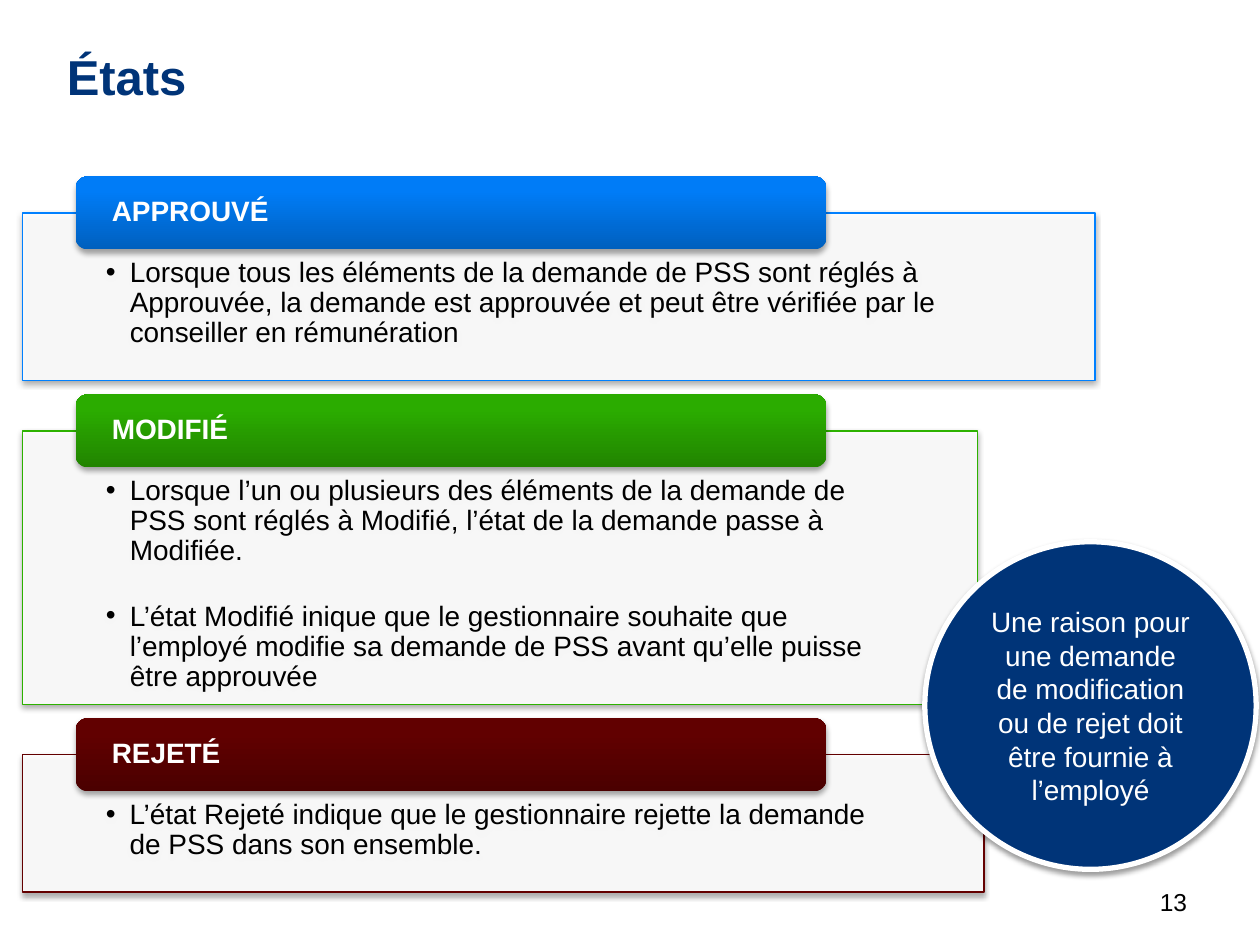
from dataclasses import dataclass

from pptx import Presentation
from pptx.dml.color import RGBColor
from pptx.enum.shapes import MSO_SHAPE
from pptx.enum.text import MSO_ANCHOR, PP_ALIGN
from pptx.oxml.ns import qn
from pptx.util import Emu, Inches, Pt
from lxml import etree

RECT, ROUND, OVAL = MSO_SHAPE.RECTANGLE, MSO_SHAPE.ROUNDED_RECTANGLE, MSO_SHAPE.OVAL
TOP, MIDDLE = MSO_ANCHOR.TOP, MSO_ANCHOR.MIDDLE
LEFT, CENTER, RIGHT = PP_ALIGN.LEFT, PP_ALIGN.CENTER, PP_ALIGN.RIGHT

COLORS = {"navy": "003478", "white": "FFFFFF", "black": "000000",
          "blue": "0080FF", "green": "2DB200", "red": "640000"}
GRADIENTS = {"blue": ((0, "0060BE"), (80, "007CF7"), (100, "007DF8")),
             "green": ((0, "218400"), (80, "2BAC00"), (100, "2BAD00")),
             "red": ((0, "4B0000"), (80, "610000"), (100, "610000"))}

# Stack layout, in inches
STACK_LEFT, STACK_TOP, STACK_GAP = 0.18, 1.4, 0.11
HEAD_LEFT, HEAD_W, HEAD_H = 0.6, 5.96, 0.58
INDENT = 0.19


@dataclass
class State:
    name: str
    color: str
    width: float
    height: float
    points: tuple[str, ...]


STATES = (
    State("APPROUVÉ", "blue", 8.51, 1.33, (
        "Lorsque tous les éléments de la demande de PSS sont réglés à Approuvée, "
        "la demande est approuvée et peut être vérifiée par le conseiller en rémunération",)),
    State("MODIFIÉ", "green", 7.58, 2.17, (
        "Lorsque l’un ou plusieurs des éléments de la demande de PSS sont réglés "
        "à Modifié, l’état de la demande passe à Modifiée.",
        "L’état Modifié inique que le gestionnaire souhaite que l’employé modifie "
        "sa demande de PSS avant qu’elle puisse être approuvée")),
    State("REJETÉ", "red", 7.63, 1.09, (
        "L’état Rejeté indique que le gestionnaire rejette la demande de PSS "
        "dans son ensemble.",)),
)


def rgb(name: str) -> RGBColor:
    return RGBColor.from_string(COLORS[name])


def sub(parent, tag: str, **attrs):
    return etree.SubElement(parent, qn(tag), {k: str(v) for k, v in attrs.items()})


def add_shadow(sp, alpha: int, dist: float) -> None:
    sp.shadow.inherit = False
    effects = sp._element.spPr.find(qn("a:effectLst"))
    shadow = sub(effects, "a:outerShdw", blurRad=Pt(3.1), dist=Pt(dist),
                 dir=90 * 60000, rotWithShape=0)
    color = sub(shadow, "a:srgbClr", val=COLORS["black"])
    sub(color, "a:alpha", val=alpha * 1000)


def add_shape(slide, kind, box, fill: str, line: str | None = None,
              weight: float = 0.75, alpha: int = 35, dist: float = 1.8):
    sp = slide.shapes.add_shape(kind, *map(Inches, box))
    sp.fill.solid()
    sp.fill.fore_color.rgb = rgb(fill)
    if line:
        sp.line.color.rgb = rgb(line)
        sp.line.width = Pt(weight)
    else:
        sp.line.fill.background()
    add_shadow(sp, alpha, dist)
    return sp


def set_gradient(sp, stops) -> None:
    sp.fill.gradient()
    sp.fill.gradient_angle = 90
    gs_list = sp._element.spPr.find(qn("a:gradFill")).find(qn("a:gsLst"))
    for gs in list(gs_list):
        gs_list.remove(gs)
    for pos, color in stops:
        sub(sub(gs_list, "a:gs", pos=pos * 1000), "a:srgbClr", val=color)


def write(sp, texts, color: str, size: float = 16, bold: bool = False, align=LEFT,
          anchor=MIDDLE, margins=(0.1, 0.05, 0.1, 0.05), spacing: float = 1.0,
          bullets: bool = False) -> None:
    tf = sp.text_frame
    sides = ("margin_left", "margin_top", "margin_right", "margin_bottom")
    frame = {"word_wrap": True, "vertical_anchor": anchor,
             **dict(zip(sides, map(Inches, margins)))}
    for name, value in frame.items():
        setattr(tf, name, value)
    for i, text in enumerate(texts):
        p = tf.add_paragraph() if i else tf.paragraphs[0]
        p.alignment, p.line_spacing = align, spacing
        p.space_before = Pt(20 if i else 0)
        if bullets:
            pPr = p._p.get_or_add_pPr()
            pPr.set("marL", str(Inches(INDENT)))
            pPr.set("indent", str(Emu(-Inches(INDENT))))
            sub(pPr, "a:buFont", typeface="Arial")
            sub(pPr, "a:buChar", char="•")
        r = p.add_run()
        r.text = text
        for name, value in {"name": "Arial", "size": Pt(size), "bold": bold}.items():
            setattr(r.font, name, value)
        r.font.color.rgb = rgb(color)


def add_state(slide, state: State, top: float) -> float:
    """Draw one state and return the top of the next one."""
    body_top = top + HEAD_H / 2
    body = add_shape(slide, RECT, (STACK_LEFT, body_top, state.width, state.height),
                     "white", state.color)
    fill_color = body._element.spPr.find(qn("a:solidFill"))[0]
    sub(fill_color, "a:alpha", val=90000)
    write(body, state.points, "black", anchor=TOP, margins=(0.66, 0.36, 0.66, 0.12),
          spacing=0.9, bullets=True)

    head = add_shape(slide, ROUND, (HEAD_LEFT, top, HEAD_W, HEAD_H), state.color)
    set_gradient(head, GRADIENTS[state.color])
    write(head, [state.name], "white", bold=True, margins=(0.26, 0, 0.26, 0), spacing=0.9)
    return body_top + state.height + STACK_GAP


def main() -> None:
    prs = Presentation()
    prs.slide_width, prs.slide_height = Inches(10), Inches(7.5)
    slide = prs.slides.add_slide(prs.slide_layouts[5])

    # Title
    title = slide.shapes.title
    box = dict(zip(("left", "top", "width", "height"), map(Inches, (0.43, 0.3, 9.13, 0.6))))
    for name, value in box.items():
        setattr(title, name, value)
    write(title, ["États"], "navy", size=28, bold=True)

    # Slide number
    number = slide.shapes.add_textbox(*map(Inches, (7.44, 6.99, 2.08, 0.29)))
    write(number, ["13"], "black", size=14, align=RIGHT, anchor=TOP)

    # Stack of states
    top = STACK_TOP
    for state in STATES:
        top = add_state(slide, state, top)

    # Callout
    callout = add_shape(slide, OVAL, (7.34, 4.3, 2.63, 2.6), "navy", "white",
                        weight=3, alpha=38, dist=1.6)
    write(callout, ["Une raison pour une demande de modification ou de rejet doit "
                    "être fournie à l’employé"], "white", align=CENTER)

    prs.save("out.pptx")


if __name__ == "__main__":
    main()
